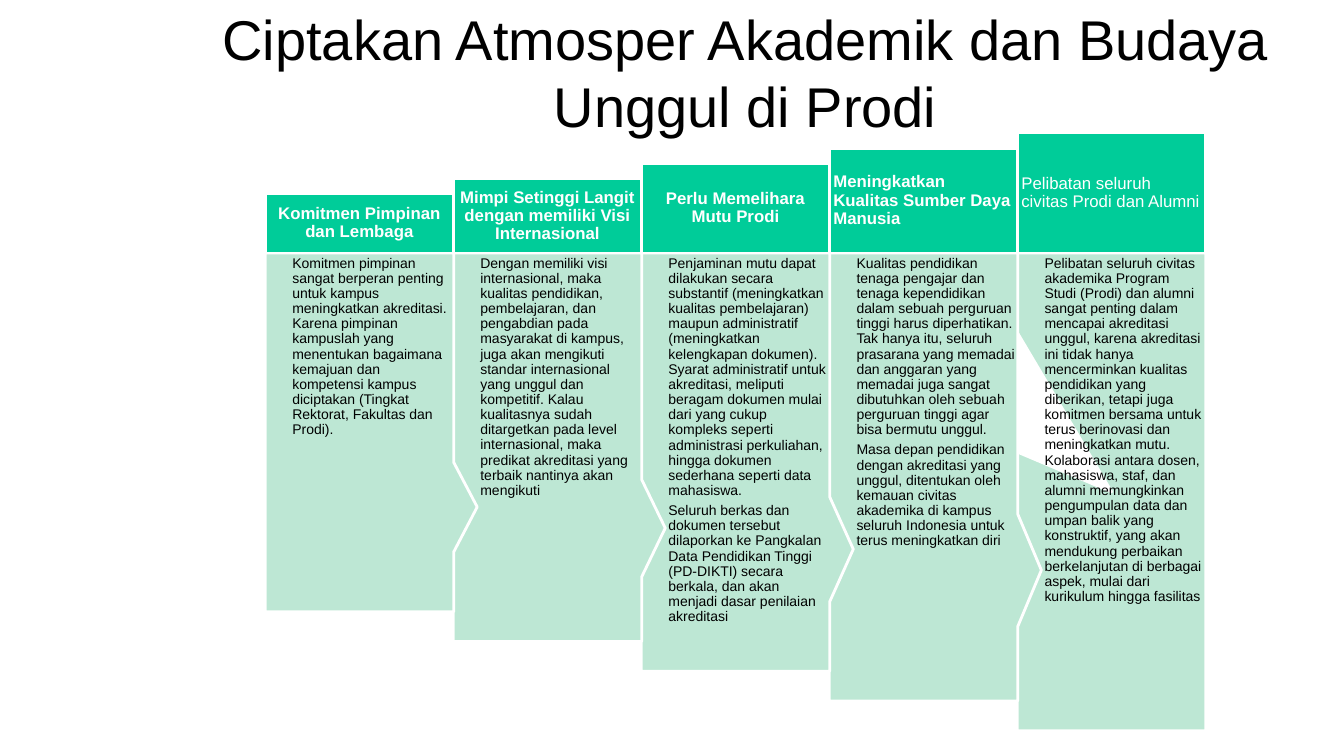
from pptx import Presentation
from pptx.dml.color import RGBColor
from pptx.enum.shapes import MSO_SHAPE
from pptx.enum.text import MSO_ANCHOR, MSO_AUTO_SIZE, PP_ALIGN
from pptx.util import Inches, Pt

HEADER_KIND = MSO_SHAPE.RECTANGLE
BODY_KIND = MSO_SHAPE.RECTANGULAR_CALLOUT
TOP, MIDDLE = MSO_ANCHOR.TOP, MSO_ANCHOR.MIDDLE
LEFT, CENTER = PP_ALIGN.LEFT, PP_ALIGN.CENTER
NO_AUTOFIT = MSO_AUTO_SIZE.NONE

BLACK = RGBColor(0x00, 0x00, 0x00)
WHITE = RGBColor(0xFF, 0xFF, 0xFF)
GREEN = RGBColor(0x00, 0xCC, 0x99)
MINT = RGBColor(0xBD, 0xE7, 0xD4)

FONT = "Arial"
TITLE = "Ciptakan Atmosper Akademik dan Budaya Unggul di Prodi"
FIRST_LEFT, LAST_LEFT = 2.63, 10.09
COLUMN_WIDTH = 1.87
BODY_TOP = 2.51
HEADER_HEIGHT, HEADER_STEP = 0.59, 0.15
FIRST_BODY_HEIGHT, LAST_BODY_HEIGHT = 3.56, 4.74
HEADER_INSET, BODY_INSET, BODY_INDENT = 0.04, 0.03, 0.27
ARROW_TIP = (0.625, 0.208)
LAST_TIP = (0, 0)

COLUMNS = [
    ("Komitmen Pimpinan dan Lembaga", CENTER, True, ARROW_TIP, [
        "Komitmen pimpinan sangat berperan penting untuk kampus meningkatkan "
        "akreditasi. Karena pimpinan kampuslah yang menentukan bagaimana kemajuan "
        "dan kompetensi kampus diciptakan (Tingkat Rektorat, Fakultas dan Prodi).",
    ]),
    ("Mimpi Setinggi Langit dengan memiliki Visi Internasional", CENTER, True, ARROW_TIP, [
        "Dengan memiliki visi internasional, maka kualitas pendidikan, "
        "pembelajaran, dan pengabdian pada masyarakat di kampus, juga akan "
        "mengikuti standar internasional yang unggul dan kompetitif. Kalau "
        "kualitasnya sudah ditargetkan pada level internasional, maka predikat "
        "akreditasi yang terbaik nantinya akan mengikuti",
    ]),
    ("Perlu Memelihara Mutu Prodi", CENTER, True, ARROW_TIP, [
        "Penjaminan mutu dapat dilakukan secara substantif (meningkatkan kualitas "
        "pembelajaran) maupun administratif (meningkatkan kelengkapan dokumen). "
        "Syarat administratif untuk akreditasi, meliputi beragam dokumen mulai "
        "dari yang cukup kompleks seperti administrasi perkuliahan, hingga "
        "dokumen sederhana seperti data mahasiswa.",
        "Seluruh berkas dan dokumen tersebut dilaporkan ke Pangkalan Data "
        "Pendidikan Tinggi (PD-DIKTI) secara berkala, dan akan menjadi dasar "
        "penilaian akreditasi",
    ]),
    ("Meningkatkan Kualitas Sumber Daya Manusia", LEFT, True, ARROW_TIP, [
        "Kualitas pendidikan tenaga pengajar dan tenaga kependidikan dalam sebuah "
        "perguruan tinggi harus diperhatikan. Tak hanya itu, seluruh prasarana "
        "yang memadai dan anggaran yang memadai juga sangat dibutuhkan oleh "
        "sebuah perguruan tinggi agar bisa bermutu unggul.",
        "Masa depan pendidikan dengan akreditasi yang unggul, ditentukan oleh "
        "kemauan civitas akademika di kampus seluruh Indonesia untuk terus "
        "meningkatkan diri",
    ]),
    ("Pelibatan seluruh civitas Prodi dan Alumni", LEFT, False, LAST_TIP, [
        "Pelibatan seluruh civitas akademika Program Studi (Prodi) dan alumni "
        "sangat penting dalam mencapai akreditasi unggul, karena akreditasi ini "
        "tidak hanya mencerminkan kualitas pendidikan yang diberikan, tetapi juga "
        "komitmen bersama untuk terus berinovasi dan meningkatkan mutu. "
        "Kolaborasi antara dosen, mahasiswa, staf, dan alumni memungkinkan "
        "pengumpulan data dan umpan balik yang konstruktif, yang akan mendukung "
        "perbaikan berkelanjutan di berbagai aspek, mulai dari kurikulum hingga "
        "fasilitas",
    ]),
]


def set_font(paragraph, size, color, bold=False):
    font = paragraph.font
    font.name = FONT
    font.size = Pt(size)
    font.bold = bold
    font.color.rgb = color


def add_title(slide):
    title = slide.shapes.title
    title.left, title.top = Inches(2), Inches(0.25)
    title.width, title.height = Inches(10.78), Inches(0.92)
    frame = title.text_frame
    frame.text = TITLE
    frame.word_wrap = True
    frame.auto_size = NO_AUTOFIT
    frame.vertical_anchor = MIDDLE
    heading = frame.paragraphs[0]
    heading.alignment = CENTER
    set_font(heading, 40, BLACK)


def add_panel(slide, kind, left, top, height, fill):
    panel = slide.shapes.add_shape(
        kind, Inches(left), Inches(top), Inches(COLUMN_WIDTH), Inches(height))
    panel.shadow.inherit = False
    panel.fill.solid()
    panel.fill.fore_color.rgb = fill
    panel.line.color.rgb = WHITE
    panel.line.width = Pt(2)
    return panel


def fill_text(panel, texts, size, color, anchor, inset, indent, align, bold):
    frame = panel.text_frame
    frame.word_wrap = True
    frame.vertical_anchor = anchor
    frame.margin_top = frame.margin_right = frame.margin_bottom = Inches(inset)
    frame.margin_left = Inches(indent)
    frame.text = "\n".join(texts)
    for paragraph in frame.paragraphs:
        paragraph.alignment = align
        paragraph.line_spacing = 0.9
        paragraph.space_after = Pt(0.35 * size)
        set_font(paragraph, size, color, bold)


def add_column(slide, index):
    header_text, align, bold, tip, body_texts = COLUMNS[index]
    share = index / (len(COLUMNS) - 1)
    left = FIRST_LEFT + share * (LAST_LEFT - FIRST_LEFT)
    body_height = FIRST_BODY_HEIGHT + share * (LAST_BODY_HEIGHT - FIRST_BODY_HEIGHT)
    header_height = HEADER_HEIGHT + index * HEADER_STEP

    body = add_panel(slide, BODY_KIND, left, BODY_TOP, body_height, MINT)
    body.adjustments[0], body.adjustments[1] = tip
    fill_text(body, body_texts, 10, BLACK, TOP, BODY_INSET, BODY_INDENT, LEFT, False)

    header = add_panel(
        slide, HEADER_KIND, left, BODY_TOP - header_height, header_height, GREEN)
    fill_text(header, [header_text], 12, WHITE, MIDDLE,
              HEADER_INSET, HEADER_INSET, align, bold)


def main():
    deck = Presentation()
    deck.slide_width, deck.slide_height = Inches(13.33), Inches(7.5)
    slide = deck.slides.add_slide(deck.slide_layouts.get_by_name("Title Only"))
    add_title(slide)
    for index in reversed(range(len(COLUMNS))):
        add_column(slide, index)
    deck.save("out.pptx")


if __name__ == "__main__":
    main()
